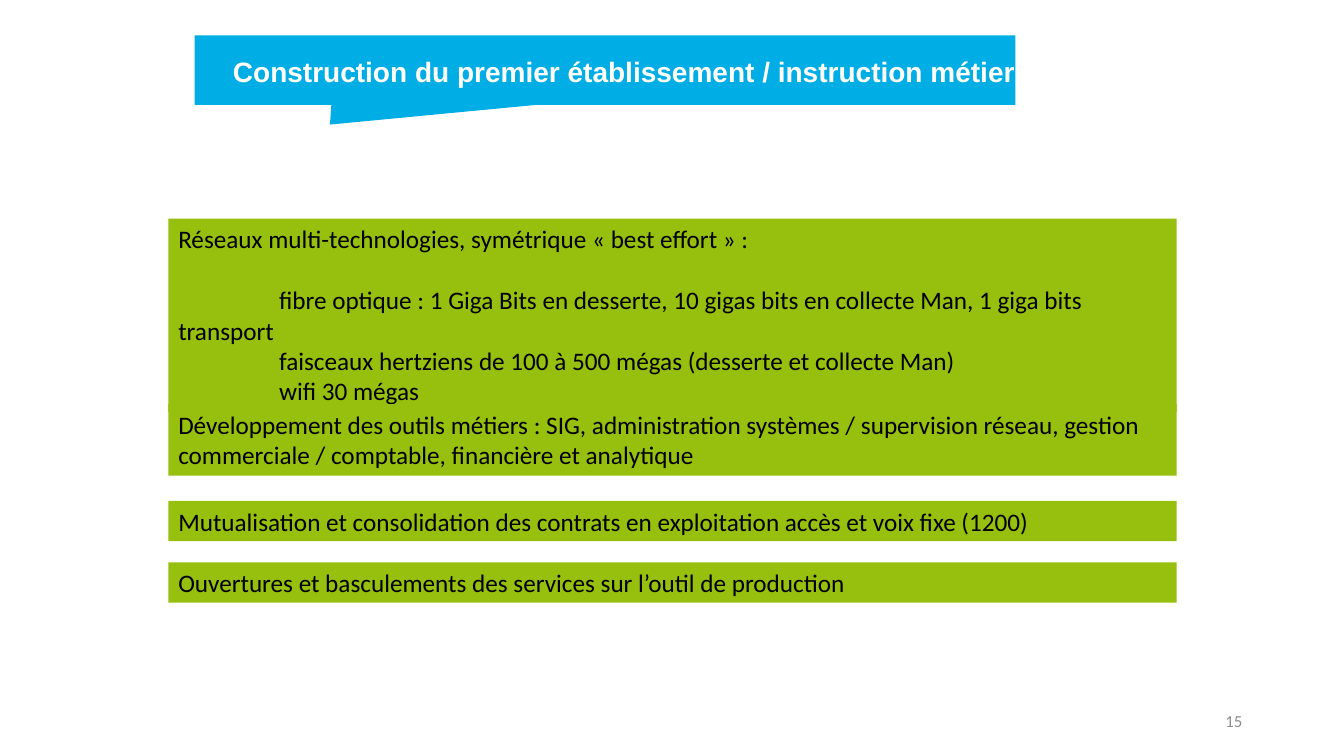
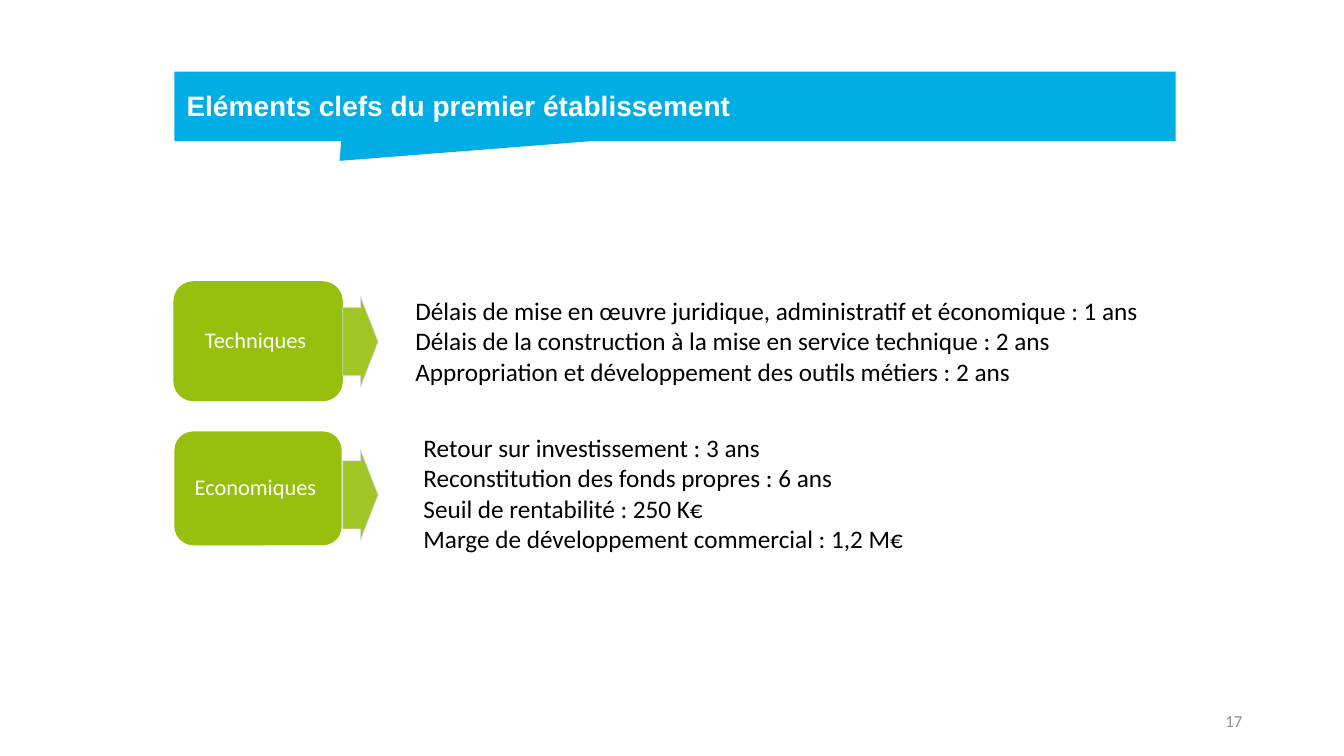
from lxml import etree
from pptx import Presentation
from pptx.dml.color import RGBColor
from pptx.enum.shapes import MSO_SHAPE
from pptx.enum.text import MSO_ANCHOR, MSO_AUTO_SIZE, PP_ALIGN
from pptx.oxml.ns import qn
from pptx.util import Inches, Pt

RECT, ROUND = MSO_SHAPE.RECTANGLE, MSO_SHAPE.ROUNDED_RECTANGLE
CALLOUT, ARROW = MSO_SHAPE.RECTANGULAR_CALLOUT, MSO_SHAPE.RIGHT_ARROW
TOP, MIDDLE = MSO_ANCHOR.TOP, MSO_ANCHOR.MIDDLE
LEFT, CENTER, RIGHT = PP_ALIGN.LEFT, PP_ALIGN.CENTER, PP_ALIGN.RIGHT
NO_FIT = MSO_AUTO_SIZE.NONE

BLUE, GREEN, PALE = "00ADE5", "97BF0D", "D2DEEF"
WHITE, BLACK, GREY = "FFFFFF", "000000", "8C8C8C"
TITLE_ONLY, TWO_CONTENT = 5, 3
BLOCK_X, BLOCK_W = 1.67, 10


def rgb(value):
    return RGBColor.from_string(value)


def place(sp, box):
    sp.left, sp.top, sp.width, sp.height = map(Inches, box)


def add_box(s, kind, box, fill):
    sp = s.shapes.add_shape(kind, *map(Inches, box))
    sp.shadow.inherit = False
    sp.fill.solid()
    sp.fill.fore_color.rgb = rgb(fill)
    sp.line.fill.background()
    return sp


def write(sp, lines, size, color=BLACK, font="Calibri", bold=False,
          align=LEFT, anchor=TOP):
    """Fill a shape with one plain paragraph per line."""
    tf = sp.text_frame
    tf.word_wrap = True
    tf.auto_size = NO_FIT
    tf.vertical_anchor = anchor
    for i, line in enumerate(lines):
        p = tf.paragraphs[0] if i == 0 else tf.add_paragraph()
        pPr = p._p.get_or_add_pPr()
        pPr.set("marL", "0")
        pPr.set("indent", "0")
        etree.SubElement(pPr, qn("a:buNone"))
        p.alignment = align
        p.space_before = Pt(0)
        r = p.add_run()
        r.text = line
        r.font.size, r.font.name, r.font.bold = Pt(size), font, bold
        r.font.color.rgb = rgb(color)
    return tf


def add_slide(prs, layout, number, title, banner, title_box):
    """Slide with the blue callout banner, its title and the page number."""
    s = prs.slides.add_slide(prs.slide_layouts[layout])
    for ph in list(s.placeholders):
        if ph.placeholder_format.idx in (10, 11, 12):
            ph.element.getparent().remove(ph.element)
    callout = add_box(s, CALLOUT, banner, BLUE)
    callout.adjustments[0], callout.adjustments[1] = -0.335, 0.784
    heading = s.shapes.title
    place(heading, title_box)
    write(heading, [title], 20, WHITE, "Arial", True)
    callout.element.addnext(heading.element)  # title in front of the banner
    page = s.shapes.add_textbox(*map(Inches, (9.42, 6.95, 3, 0.4)))
    write(page, [str(number)], 12, GREY, align=RIGHT, anchor=MIDDLE)
    return s


def add_block(s, top, height, lines):
    """Green block: a heading, then indented lines after a gap."""
    sp = add_box(s, RECT, (BLOCK_X, top, BLOCK_W, height), GREEN)
    tf = write(sp, lines, 18)
    for i, p in enumerate(tf.paragraphs[1:]):
        p._p.get_or_add_pPr().set("indent", str(Inches(1)))
        if i == 0:
            p.space_before = Pt(22)


def add_theme(s, label, box, arrow_top, body, body_box, lines):
    """Rounded label, arrow and the list it points to."""
    x, y, w, h = box
    sp = add_box(s, ROUND, box, GREEN)
    tf = write(sp, [label], 16, WHITE, align=CENTER, anchor=MIDDLE)
    tf.margin_left = tf.margin_right = Inches(0.07)
    tf.margin_top = tf.margin_bottom = Inches(0.03)
    tf.paragraphs[0].line_spacing = 0.9
    # Arrow, slightly transparent
    arrow = add_box(s, ARROW, (3.4, arrow_top, 0.35, 0.9), GREEN)
    arrow.adjustments[0], arrow.adjustments[1] = 0.75, 0.5
    arrow.line.color.rgb = rgb(PALE)
    arrow.line.width = Pt(0.5)
    for color in arrow.element.spPr.iter(qn("a:srgbClr")):
        etree.SubElement(color, qn("a:alpha"), val="90000")
    # List
    place(body, body_box)
    write(body, lines, 18)


def network_slide(prs):
    s = add_slide(prs, TITLE_ONLY, 15,
                  "Construction du premier établissement / instruction métier",
                  (1.93, 0.35, 8.14, 0.69), (2.21, 0.49, 8.14, 0.77))
    blocks = [
        (2.17, 1.92, [
            "Réseaux multi-technologies, symétrique « best effort » :",
            "fibre optique : 1 Giga Bits en desserte, 10 gigas bits en "
            "collecte Man, 1 giga bits transport",
            "faisceaux hertziens de 100 à 500 mégas (desserte et collecte Man)",
            "wifi 30 mégas"]),
        (4.01, 0.71, [
            "Développement des outils métiers : SIG, administration systèmes / "
            "supervision réseau, gestion commerciale / comptable, financière "
            "et analytique"]),
        (4.97, 0.4, ["Mutualisation et consolidation des contrats en "
                     "exploitation accès et voix fixe (1200)"]),
        (5.58, 0.4, ["Ouvertures et basculements des services sur l’outil "
                     "de production"]),
    ]
    for block in blocks:
        add_block(s, *block)


def key_facts_slide(prs):
    s = add_slide(prs, TWO_CONTENT, 17,
                  "Eléments clefs du premier établissement",
                  (1.73, 0.71, 9.93, 0.69), (1.75, 0.83, 9.92, 0.44))
    add_theme(s, "Techniques ", (1.72, 2.79, 1.68, 1.19), 2.94,
              s.placeholders[1], (4.02, 2.88, 7.65, 1.01), [
                  "Délais de mise en œuvre juridique, administratif et "
                  "économique : 1 ans",
                  "Délais de la construction à la mise en service technique : "
                  "2 ans",
                  "Appropriation et développement des outils métiers : 2 ans"])
    add_theme(s, "Economiques ", (1.73, 4.28, 1.66, 1.13), 4.46,
              s.placeholders[2], (4.1, 4.24, 7.57, 1.31), [
                  "Retour sur investissement : 3 ans",
                  "Reconstitution des fonds propres : 6 ans",
                  "Seuil de rentabilité : 250 K€",
                  "Marge de développement commercial : 1,2 M€"])


def main():
    prs = Presentation()
    prs.slide_width, prs.slide_height = Inches(13.33), Inches(7.5)
    network_slide(prs)
    key_facts_slide(prs)
    prs.save("out.pptx")


if __name__ == "__main__":
    main()
